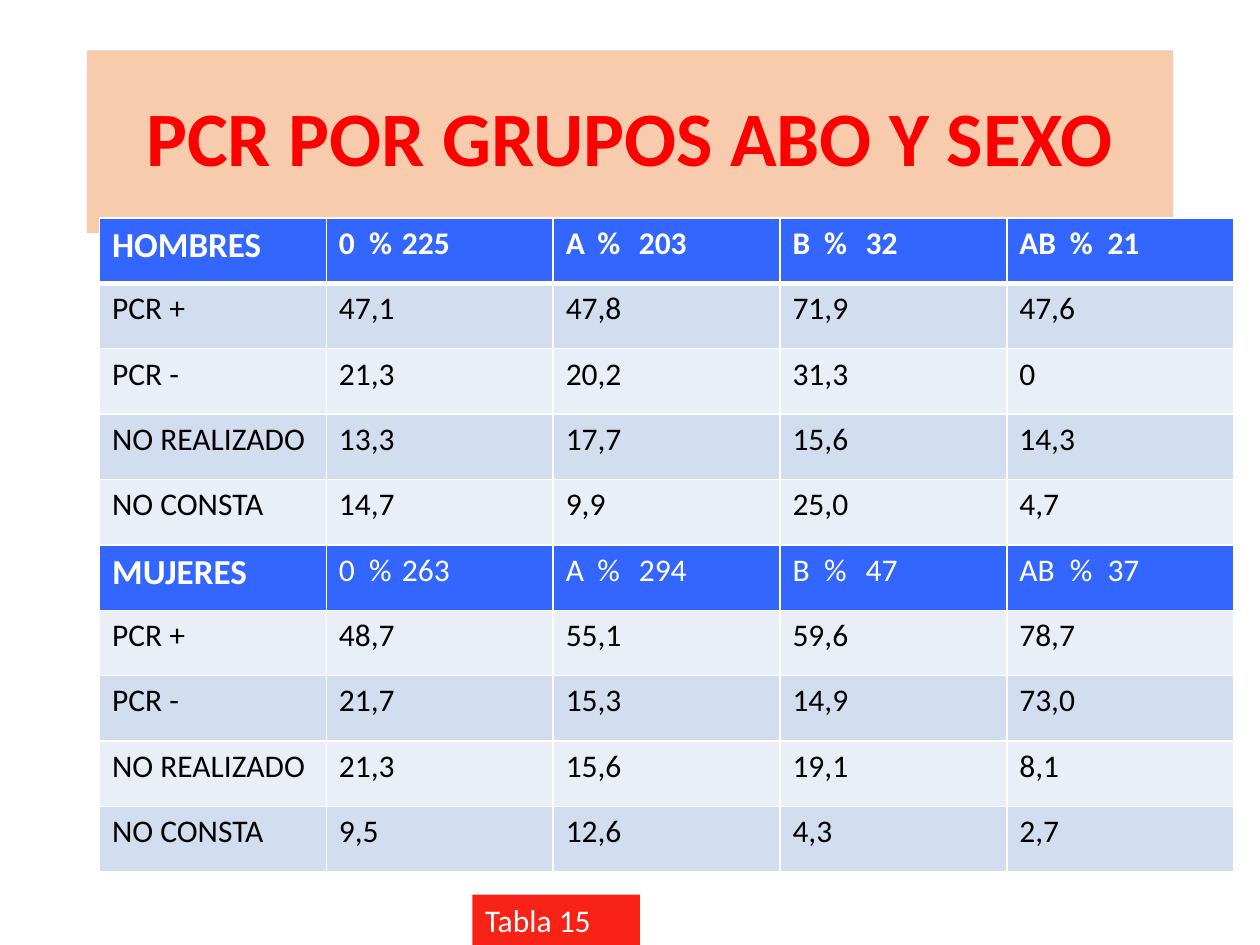
import pptx
import pptx.util
import pptx.dml.color
import pptx.enum.shapes
import pptx.enum.text
import pptx.oxml.ns
from lxml import etree

Inches, Pt = pptx.util.Inches, pptx.util.Pt
ALIGN, ANCHOR = pptx.enum.text.PP_ALIGN, pptx.enum.text.MSO_ANCHOR

TITLE = "PCR POR GRUPOS ABO Y SEXO"
LABEL = "Tabla 15"
TESTS = ["PCR +", "PCR -", "NO REALIZADO", "NO CONSTA"]
GROUPS = ["0", "A", "B", "AB"]
STOPS = [(0.24, 0.5), (0.25, 0.58), (0.25, 0.58), (0.4, 0.7)]
BLOCKS = [
    ("HOMBRES", [225, 203, 32, 21], [
        ["47,1", "47,8", "71,9", "47,6"],
        ["21,3", "20,2", "31,3", "0"],
        ["13,3", "17,7", "15,6", "14,3"],
        ["14,7", "9,9", "25,0", "4,7"]]),
    ("MUJERES", [263, 294, 47, 37], [
        ["48,7", "55,1", "59,6", "78,7"],
        ["21,7", "15,3", "14,9", "73,0"],
        ["21,3", "15,6", "19,1", "8,1"],
        ["9,5", "12,6", "4,3", "2,7"]]),
]
COLORS = {"peach": "F8CBAD", "red": "FF0000", "head": "3366FF",
          "dark": "D2DEEF", "light": "EAEFF7", "label": "F82316",
          "white": "FFFFFF", "black": "000000"}


def rgb(name):
    return pptx.dml.color.RGBColor.from_string(COLORS[name])


def paint(item, name):
    item.fill.solid()
    item.fill.fore_color.rgb = rgb(name)


def write(para, text, color, size=18, bold=False):
    run = para.add_run()
    run.text = text
    form = {"name": "Calibri", "size": Pt(size), "bold": bold}
    for key, value in form.items():
        setattr(run.font, key, value)
    run.font.color.rgb = rgb(color)


def add(parent, tag, **attrs):
    return etree.SubElement(parent, pptx.oxml.ns.qn(tag), attrs)


def edge(cell, widths):
    """Draw white borders; widths maps a side (L, R, T, B) to points."""
    props = cell._tc.get_or_add_tcPr()
    for side, width in widths.items():
        line = add(props, "a:ln" + side, w=str(Pt(width)))
        add(add(line, "a:solidFill"), "a:srgbClr", val=COLORS["white"])


def set_tabs(para, stops):
    tabs = add(para._p.get_or_add_pPr(), "a:tabLst")
    for stop in stops:
        add(tabs, "a:tab", pos=str(Inches(stop)), algn="l")


def add_title(slide):
    title = slide.shapes.title
    place = {"left": 0.69, "top": 0.4, "width": 8.62, "height": 1.45}
    for key, value in place.items():
        setattr(title, key, Inches(value))
    paint(title, "peach")
    title.text_frame.vertical_anchor = ANCHOR.MIDDLE
    para = title.text_frame.paragraphs[0]
    para.alignment, para.line_spacing = ALIGN.CENTER, 0.9
    write(para, TITLE, "red", 44, True)


def add_grid(slide):
    rows = []
    for name, counts, values in BLOCKS:
        heads = [f"{group}\t%\t{count}" for group, count in zip(GROUPS, counts)]
        rows.append([name] + heads)
        rows += [[test] + line for test, line in zip(TESTS, values)]
    grid = slide.shapes.add_table(len(rows), len(rows[0]), Inches(0.79),
                                  Inches(1.73), Inches(9), Inches(5.19)).table
    for r, row in enumerate(rows):
        head = r % (len(TESTS) + 1) == 0
        fill = "head" if head else "dark" if r % 2 else "light"
        for c, text in enumerate(row):
            cell = grid.cell(r, c)
            edge(cell, {"L": 1, "R": 1, "T": 3 if r == 1 else 1,
                        "B": 3 if r == 0 else 1})
            paint(cell, fill)
            para = cell.text_frame.paragraphs[0]
            if head and c:
                set_tabs(para, STOPS[c - 1])
            write(para, text, "white" if head else "black",
                  20 if head and c == 0 else 18,
                  r == 0 or head and c == 0)


def add_label(slide):
    box = slide.shapes.add_shape(
        pptx.enum.shapes.MSO_SHAPE.RECTANGLE,
        Inches(3.75), Inches(7.1), Inches(1.33), Inches(0.4))
    box.shadow.inherit = False
    box.line.fill.background()
    paint(box, "label")
    box.text_frame.vertical_anchor = ANCHOR.TOP
    para = box.text_frame.paragraphs[0]
    para.alignment = ALIGN.LEFT
    write(para, LABEL, "white")


def main():
    deck = pptx.Presentation()
    deck.slide_width, deck.slide_height = Inches(10), Inches(7.5)
    slide = deck.slides.add_slide(deck.slide_layouts[5])
    add_title(slide)
    add_grid(slide)
    add_label(slide)
    deck.save("out.pptx")


if __name__ == "__main__":
    main()
